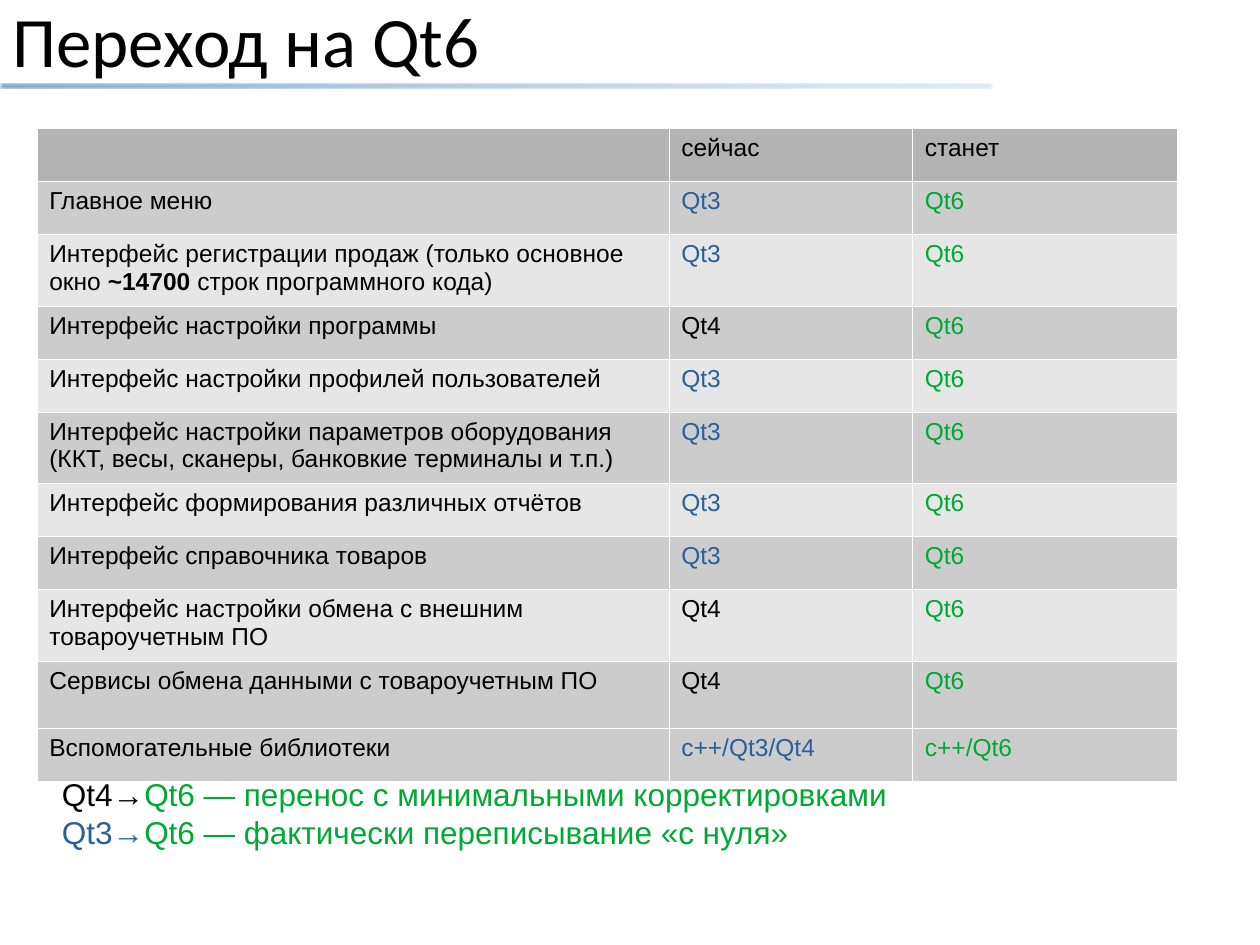
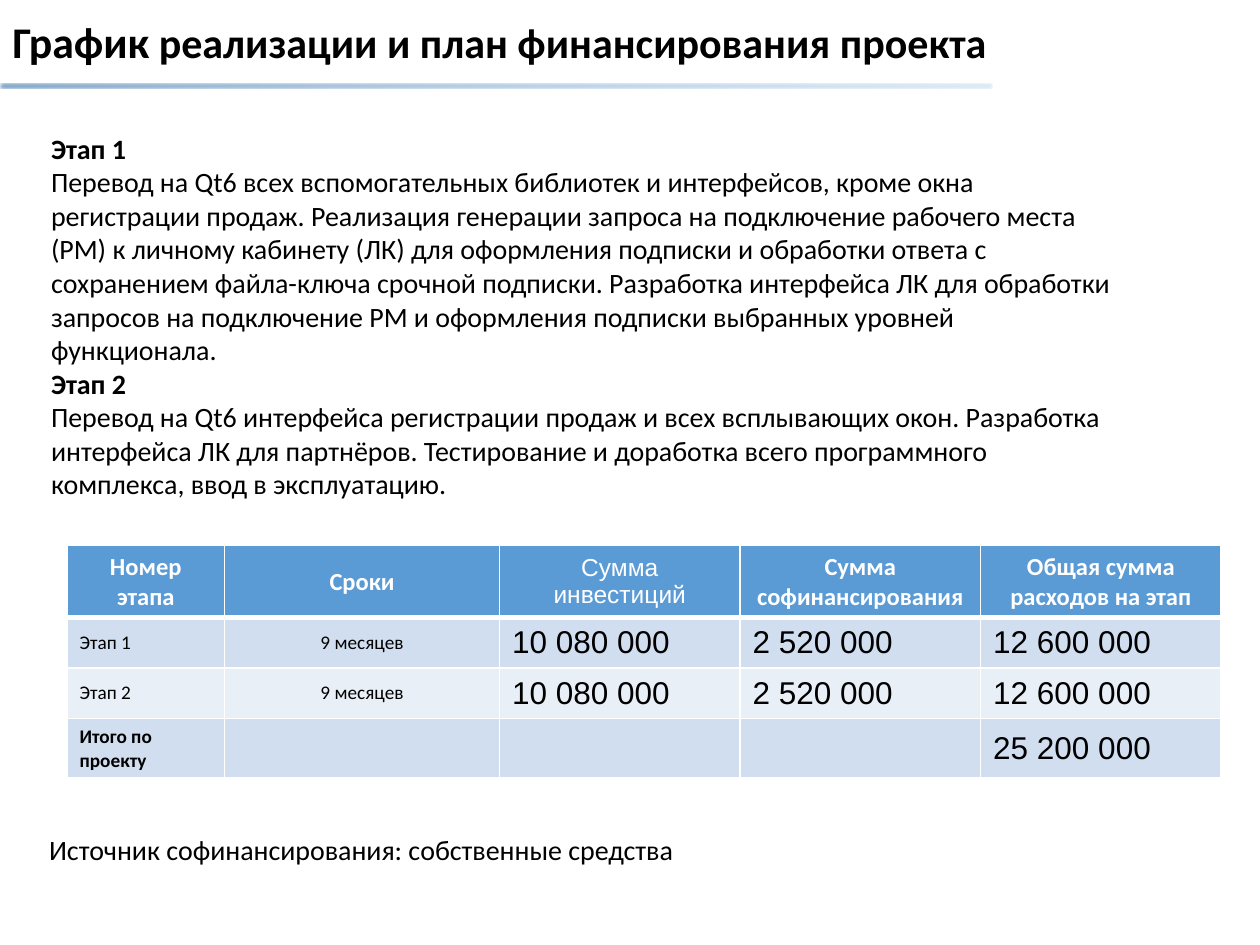
from dataclasses import dataclass, replace

from lxml import etree
from pptx import Presentation
from pptx.dml.color import RGBColor
from pptx.enum.shapes import MSO_SHAPE
from pptx.enum.text import MSO_ANCHOR, PP_ALIGN
from pptx.oxml.ns import qn
from pptx.util import Cm, Pt

ROUNDED = MSO_SHAPE.ROUNDED_RECTANGLE
TOP, MIDDLE = MSO_ANCHOR.TOP, MSO_ANCHOR.MIDDLE
LEFT, CENTER = PP_ALIGN.LEFT, PP_ALIGN.CENTER
BLANK_LAYOUT = 6


# Theme: colours, fonts and type sizes
@dataclass(frozen=True)
class Theme:
    black: str = "000000"
    white: str = "FFFFFF"
    old_blue: str = "2A6099"
    new_green: str = "00A933"
    rule_start: str = "2A69A2"
    rule_end: str = "66A2D8"
    grey_header: str = "B3B3B3"
    grey_dark: str = "CCCCCC"
    grey_light: str = "E6E6E6"
    blue_header: str = "5B9BD5"
    blue_dark: str = "D1DEEF"
    blue_light: str = "E9EFF7"
    heading_font: str = "Calibri"
    table_font: str = "Arial"
    big_title: float = 40.5
    small_title: float = 24
    large: float = 18
    body: float = 16
    table: float = 14
    small: float = 11
    hairline: float = 0.06
    thin: float = 0.96
    thick: float = 3


THEME = Theme()


@dataclass(frozen=True)
class Style:
    size: float
    font: str = THEME.table_font
    colour: str = THEME.black
    bold: bool = False


TITLE = Style(THEME.big_title, THEME.heading_font)
PLAN_TITLE = Style(THEME.small_title, THEME.heading_font, bold=True)
BODY = Style(THEME.body, THEME.heading_font)
BODY_BOLD = replace(BODY, bold=True)
CELL = Style(THEME.table)
CELL_BOLD = replace(CELL, bold=True)
CELL_OLD = replace(CELL, colour=THEME.old_blue)
CELL_NEW = replace(CELL, colour=THEME.new_green)
NOTE = Style(THEME.large)
NOTE_OLD = replace(NOTE, colour=THEME.old_blue)
NOTE_NEW = replace(NOTE, colour=THEME.new_green)
HEADER_ARIAL = replace(CELL, colour=THEME.white)
HEADER = replace(HEADER_ARIAL, font=THEME.heading_font, bold=True)
SMALL = Style(THEME.small, THEME.heading_font)
SMALL_BOLD = replace(SMALL, bold=True)
AMOUNT = Style(THEME.large)

# Content of the Qt6 migration table: component, current version, new version
COMPONENTS = [
    ([("Главное меню", CELL)], "Qt3", "Qt6"),
    ([("Интерфейс регистрации продаж (только основное окно ", CELL),
      ("~14700", CELL_BOLD), (" строк программного кода)", CELL)], "Qt3", "Qt6"),
    ([("Интерфейс настройки программы", CELL)], "Qt4", "Qt6"),
    ([("Интерфейс настройки профилей пользователей", CELL)], "Qt3", "Qt6"),
    ([("Интерфейс настройки параметров оборудования (ККТ, весы, сканеры, "
       "банковкие терминалы и т.п.)", CELL)], "Qt3", "Qt6"),
    ([("Интерфейс формирования различных отчётов", CELL)], "Qt3", "Qt6"),
    ([("Интерфейс справочника товаров", CELL)], "Qt3", "Qt6"),
    ([("Интерфейс настройки обмена с внешним товароучетным ПО", CELL)], "Qt4", "Qt6"),
    ([("Сервисы обмена данными с товароучетным ПО", CELL)], "Qt4", "Qt6"),
    ([("Вспомогательные библиотеки", CELL)], "c++/Qt3/Qt4", "c++/Qt6"),
]
TALL_ROWS = (2, 5, 8, 9)

# Content of the funding plan
STAGES = [
    ("Этап 1",
     "Перевод на Qt6 всех вспомогательных библиотек и интерфейсов, кроме окна "
     "регистрации продаж. Реализация генерации запроса на подключение рабочего места "
     "(РМ) к личному кабинету (ЛК) для оформления подписки и обработки ответа с "
     "сохранением файла-ключа срочной подписки. Разработка интерфейса ЛК для обработки "
     "запросов на подключение РМ и оформления подписки выбранных уровней функционала."),
    ("Этап 2",
     "Перевод на Qt6 интерфейса регистрации продаж и всех всплывающих окон. Разработка "
     "интерфейса ЛК для партнёров. Тестирование и доработка всего программного "
     "комплекса, ввод в эксплуатацию."),
]
FUNDING_HEADER = ["Номер этапа", "Сроки", "Сумма инвестиций",
                  "Сумма софинансирования", "Общая сумма расходов на этап"]
FUNDING = [
    ["Этап 1", "9 месяцев", "10 080 000", "2 520 000", "12 600 000"],
    ["Этап 2", "9 месяцев", "10 080 000", "2 520 000", "12 600 000"],
    ["Итого по проекту", "", "", "", "25 200 000"],
]


# Text
def write_runs(paragraph, runs):
    for text, style in runs:
        run = paragraph.add_run()
        run.text = text
        run.font.size = Pt(style.size)
        run.font.name = style.font
        run.font.bold = style.bold
        run.font.color.rgb = RGBColor.from_string(style.colour)


def add_text(slide, left, top, width, height, paragraphs, anchor=TOP, spacing=None):
    box = slide.shapes.add_textbox(Cm(left), Cm(top), Cm(width), Cm(height))
    frame = box.text_frame
    frame.word_wrap = True
    frame.vertical_anchor = anchor
    for index, runs in enumerate(paragraphs):
        paragraph = frame.add_paragraph() if index else frame.paragraphs[0]
        paragraph.line_spacing = spacing
        write_runs(paragraph, runs)


# Title with the fading rule below it
def add_title(slide, runs):
    add_text(slide, 0, 0, 25.4, 1.8, [runs], MIDDLE, 0.9)
    rule = slide.shapes.add_shape(ROUNDED, 0, Cm(1.68), Cm(20), Cm(0.1))
    rule.shadow.inherit = False
    rule.line.fill.background()
    rule.fill.gradient()
    rule.fill.gradient_angle = 0
    colours = (THEME.rule_start, THEME.rule_end)
    for stop, position, colour in zip(rule.fill.gradient_stops, (0, 1), colours):
        stop.position = position
        stop.color.rgb = RGBColor.from_string(colour)
    properties = rule.element.spPr
    last_colour = properties.findall(".//" + qn("a:srgbClr"))[-1]
    etree.SubElement(last_colour, qn("a:alpha"), val="41000")
    effects = properties.find(qn("a:effectLst"))
    etree.SubElement(effects, qn("a:softEdge"), rad=str(Pt(1)))


# Tables
def set_borders(cell, widths):
    properties = cell._tc.get_or_add_tcPr()
    for side, width in zip("LRTB", widths):
        line = etree.SubElement(properties, qn("a:ln" + side), w=str(Pt(width)))
        fill = etree.SubElement(line, qn("a:solidFill"))
        etree.SubElement(fill, qn("a:srgbClr"), val=THEME.white)


def add_grid(slide, left, top, widths, heights):
    frame = slide.shapes.add_table(len(heights), len(widths), Cm(left), Cm(top),
                                   Cm(sum(widths)), Cm(sum(heights)))
    table = frame.table
    for column, width in zip(table.columns, widths):
        column.width = Cm(width)
    for row, height in zip(table.rows, heights):
        row.height = Cm(height)
    return table


def fill_cell(cell, runs, colour, borders, anchor=TOP, alignment=LEFT):
    set_borders(cell, borders)
    cell.fill.solid()
    cell.fill.fore_color.rgb = RGBColor.from_string(colour)
    cell.vertical_anchor = anchor
    paragraph = cell.text_frame.paragraphs[0]
    paragraph.alignment = alignment
    write_runs(paragraph, [run for run in runs if run[0]])


def add_migration_table(slide):
    rows = [([], [("сейчас", CELL)], [("станет", CELL)])]
    for component, current, future in COMPONENTS:
        current_style = CELL if current == "Qt4" else CELL_OLD
        rows.append((component, [(current, current_style)], [(future, CELL_NEW)]))
    heights = [1.36 if index in TALL_ROWS else 1.07 for index in range(len(rows))]
    table = add_grid(slide, 0.74, 2.58, [12.74, 4.91, 5.34], heights)
    last = len(rows) - 1
    for row_index, row in enumerate(rows):
        if row_index == 0:
            colour = THEME.grey_header
        elif row_index % 2 or row_index == last:
            colour = THEME.grey_dark
        else:
            colour = THEME.grey_light
        for column_index, runs in enumerate(row):
            fill_cell(table.cell(row_index, column_index), runs, colour,
                      [THEME.hairline] * 4)


def funding_style(row_index, column_index):
    if row_index == 0:
        return HEADER_ARIAL if column_index == 2 else HEADER
    if column_index >= 2:
        return AMOUNT
    return SMALL_BOLD if row_index == len(FUNDING) else SMALL


def add_funding_table(slide):
    rows = [FUNDING_HEADER] + FUNDING
    table = add_grid(slide, 1.35, 11, [3.18, 5.54] + [4.85] * 3,
                     [1.45, 0.96, 0.96, 1.2])
    fills = [THEME.blue_header, THEME.blue_dark, THEME.blue_light, THEME.blue_dark]
    for row_index, (row, colour) in enumerate(zip(rows, fills)):
        upper = THEME.thick if row_index == 1 else THEME.thin
        lower = THEME.thick if row_index == 0 else THEME.thin
        for column_index, text in enumerate(row):
            centred = row_index == 0 or column_index == 1
            fill_cell(table.cell(row_index, column_index),
                      [(text, funding_style(row_index, column_index))], colour,
                      [THEME.thin, THEME.thin, upper, lower],
                      MIDDLE, CENTER if centred else LEFT)


# Slides
def build_migration_slide(slide):
    add_title(slide, [("Переход на Qt6", TITLE)])
    add_migration_table(slide)
    add_text(slide, 1, 15.5, 22.5, 1.68, [
        [("Qt4→", NOTE), ("Qt6 — перенос с минимальными корректировками", NOTE_NEW)],
        [("Qt3→", NOTE_OLD), ("Qt6 — фактически переписывание «с нуля»", NOTE_NEW)],
    ])


def build_funding_slide(slide):
    add_title(slide, [("График", replace(PLAN_TITLE, size=25)),
                      (" реализации и план финансирования проекта", PLAN_TITLE)])
    add_funding_table(slide)
    paragraphs = []
    for name, description in STAGES:
        paragraphs += [[(name, BODY_BOLD)], [(description, BODY)]]
    add_text(slide, 0.78, 2.52, 21.9, 9.14, paragraphs)
    add_text(slide, 0.74, 16.66, 23.27, 0.93,
             [[("Источник софинансирования: собственные средства", BODY)]])


def main():
    presentation = Presentation()
    presentation.slide_width = Cm(25.4)
    presentation.slide_height = Cm(19.05)
    layout = presentation.slide_layouts[BLANK_LAYOUT]
    for build in (build_migration_slide, build_funding_slide):
        build(presentation.slides.add_slide(layout))
    presentation.save("out.pptx")


if __name__ == "__main__":
    main()
